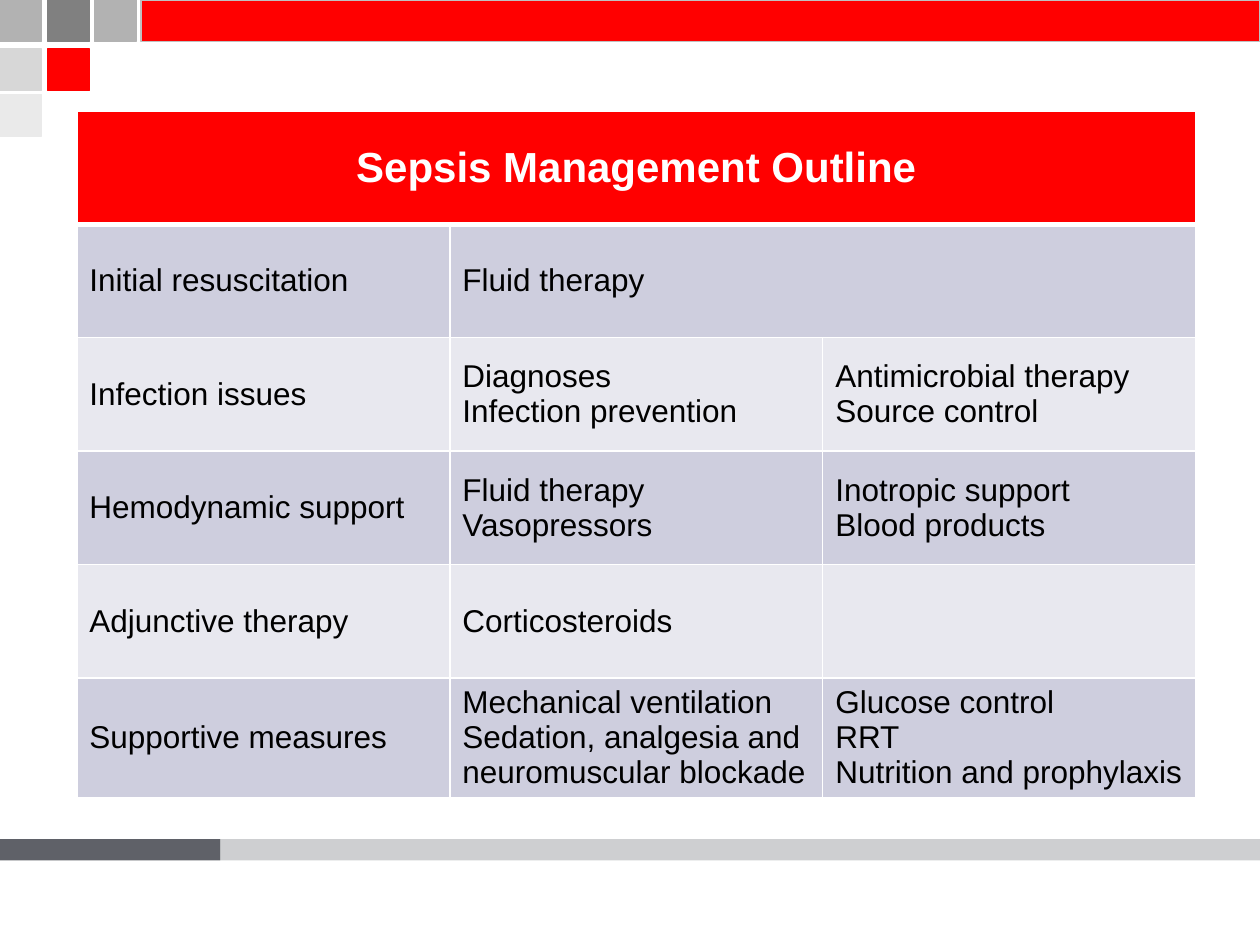
from lxml.etree import SubElement
from pptx import Presentation
from pptx.dml.color import RGBColor as RGB
from pptx.enum.shapes import MSO_SHAPE as SHAPE
from pptx.enum.text import MSO_ANCHOR as ANCHOR, PP_ALIGN as ALIGN
from pptx.oxml.ns import qn
from pptx.util import Inches, Pt

THEME = {
    "font": "Arial", "head_size": 24, "body_size": 18,
    "red": "FF0000", "white": "FFFFFF", "black": "000000",
    "mid": "B2B2B2", "dark": "808080", "light": "D7D7D7", "pale": "EAEAEA",
    "edge": "C0C0C0", "slate": "5F6168",
    "bands": ("CECEDE", "E8E8EF"),
}


def add_bar(x, y, w, h, fill, line=None):
    s = slide.shapes.add_shape(SHAPE.RECTANGLE, Inches(x), Inches(y), Inches(w), Inches(h))
    s.shadow.inherit = False
    s.fill.solid()
    s.fill.fore_color.rgb = RGB.from_string(fill)
    if line:
        s.line.color.rgb = RGB.from_string(line)
        s.line.width = Pt(0.75)
    else:
        s.line.fill.background()
    return s


def fill_cell(cell, lines, fill, font, align, borders):
    # Borders come before the fill in the cell properties
    tcPr = cell._tc.get_or_add_tcPr()
    for side, width in borders.items():
        ln = SubElement(tcPr, qn(f"a:ln{side}"), w=str(Pt(width)))
        SubElement(SubElement(ln, qn("a:solidFill")), qn("a:srgbClr"), val=THEME["white"])
    cell.fill.solid()
    cell.fill.fore_color.rgb = RGB.from_string(fill)
    cell.vertical_anchor = ANCHOR.MIDDLE
    tf = cell.text_frame
    for i, line in enumerate(lines):
        p = tf.paragraphs[0] if i == 0 else tf.add_paragraph()
        p.alignment = align
        r = p.add_run()
        r.text = line
        for name, value in font.items():
            setattr(r.font, name, value)
        r.font.color.rgb = RGB.from_string(THEME["white" if font["bold"] else "black"])


prs = Presentation()
prs.slide_width, prs.slide_height = Inches(10), Inches(7.5)
slide = prs.slides.add_slide(prs.slide_layouts[6])

# Corner squares and top bar
square_rows = [(0, ("mid", "dark", "mid")), (0.39, ("light", "red")), (0.75, ("pale",))]
for y, names in square_rows:
    for x, name in zip((0, 0.38, 0.75), names):
        add_bar(x, y, 0.33, 0.33, THEME[name], THEME[name])
add_bar(1.12, 0, 8.88, 0.33, THEME["red"], THEME["edge"])

# Footer bars, the right one translucent
add_bar(0, 6.66, 1.75, 0.17, THEME["slate"])
s = add_bar(1.75, 6.66, 8.25, 0.17, THEME["slate"])
color = s._element.spPr.find(qn("a:solidFill")).find(qn("a:srgbClr"))
SubElement(color, qn("a:alpha"), val="30000")

# Table
rows = [
    [["Sepsis Management Outline"], [], []],
    [["Initial resuscitation"], ["Fluid therapy"], []],
    [["Infection issues"], ["Diagnoses", "Infection prevention"],
     ["Antimicrobial therapy", "Source control"]],
    [["Hemodynamic support"], ["Fluid therapy", "Vasopressors"],
     ["Inotropic support", "Blood products"]],
    [["Adjunctive therapy"], ["Corticosteroids"], []],
    [["Supportive measures"],
     ["Mechanical ventilation", "Sedation, analgesia and neuromuscular blockade"],
     ["Glucose control", "RRT", "Nutrition and prophylaxis"]],
]
heights = [0.9] * 5 + [0.95]
table = slide.shapes.add_table(len(rows), 3, Inches(0.61), Inches(0.88),
                               Inches(8.88), Inches(sum(heights))).table
for col in table.columns:
    col.width = Inches(2.96)
for row, height in zip(table.rows, heights):
    row.height = Inches(height)
table.cell(0, 0).merge(table.cell(0, 2))
table.cell(1, 1).merge(table.cell(1, 2))

for i, row in enumerate(rows):
    head = i == 0
    font = {"name": THEME["font"], "bold": head,
            "size": Pt(THEME["head_size" if head else "body_size"])}
    fill = THEME["red"] if head else THEME["bands"][(i - 1) % 2]
    align = ALIGN.CENTER if head else ALIGN.LEFT
    borders = {"L": 1, "R": 1, "T": 3 if i == 1 else 1, "B": 3 if head else 1}
    for j, lines in enumerate(row):
        fill_cell(table.cell(i, j), lines, fill, font, align, borders)

prs.save("out.pptx")
